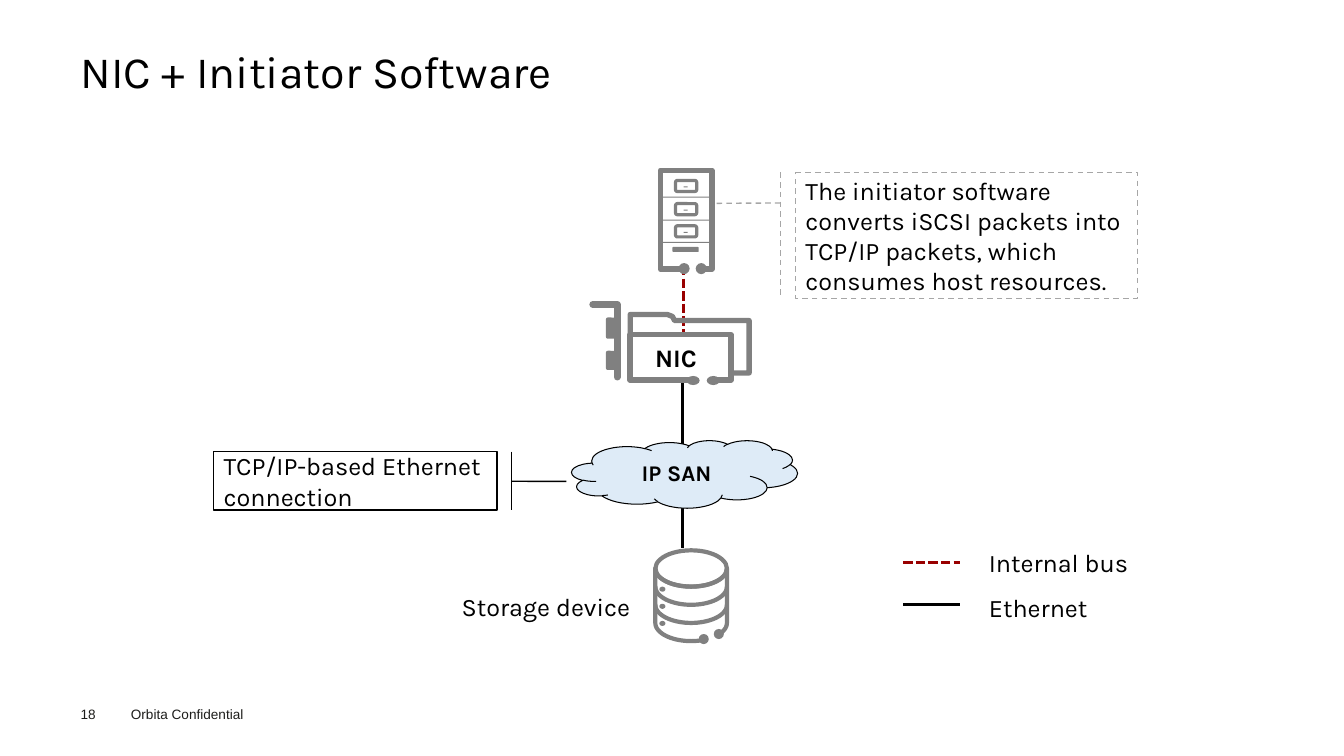
from dataclasses import dataclass
from math import cos, pi, sin

from lxml.etree import SubElement
from pptx import Presentation
from pptx.dml.color import RGBColor
from pptx.enum.dml import MSO_LINE
from pptx.enum.shapes import MSO_CONNECTOR, MSO_SHAPE
from pptx.enum.text import MSO_ANCHOR, MSO_AUTO_SIZE, PP_ALIGN
from pptx.oxml.ns import qn
from pptx.util import Inches, Pt


@dataclass(frozen=True)
class Theme:
    black: str = "000000"
    footer: str = "1D1D1B"
    bus: str = "990000"
    icon: str = "808080"
    callout: str = "A6A6A6"
    cloud: str = "DEEBF7"
    font: str = "Karla"
    footer_font: str = "Arial"
    title_size: float = 32
    text_size: float = 18
    cloud_size: float = 16
    footer_size: float = 9.7


theme = Theme()
BODY = {"name": theme.font, "size": Pt(theme.text_size)}
BOLD = {**BODY, "bold": True}
TITLE = {**BODY, "size": Pt(theme.title_size)}
CLOUD = {**BOLD, "size": Pt(theme.cloud_size)}
FOOTER = {"name": theme.footer_font, "size": Pt(theme.footer_size)}


def write_text(shape, text, font_format, color=theme.black, spacing=1.0,
               align=PP_ALIGN.LEFT, **frame_format):
    frame = shape.text_frame
    for name, value in {"word_wrap": True, **frame_format}.items():
        setattr(frame, name, value)
    paragraph = frame.paragraphs[0]
    paragraph.text = text
    paragraph.alignment = align
    paragraph.line_spacing = spacing
    for name, value in font_format.items():
        setattr(paragraph.font, name, value)
    paragraph.font.color.rgb = RGBColor.from_string(color)


def style_shape(shape, fill=None, line=None, width=1, dash=None):
    shape.shadow.inherit = False
    if fill:
        shape.fill.solid()
        shape.fill.fore_color.rgb = RGBColor.from_string(fill)
    else:
        shape.fill.background()
    if line:
        shape.line.color.rgb = RGBColor.from_string(line)
        shape.line.width = Pt(width)
        shape.line.dash_style = dash
    else:
        shape.line.fill.background()


presentation = Presentation()
presentation.slide_width = Inches(13.33)
presentation.slide_height = Inches(7.5)
slide = presentation.slides.add_slide(presentation.slide_layouts[5])
shapes = slide.shapes
no_margins = dict.fromkeys(
    ("margin_left", "margin_top", "margin_right", "margin_bottom"), 0)

# Title and footer
title = shapes.title
title.left, title.top, title.width, title.height = map(Inches, (0.8, 0.49, 11.73, 0.54))
write_text(title, "NIC + Initiator Software", TITLE, spacing=0.9,
           vertical_anchor=MSO_ANCHOR.TOP, auto_size=MSO_AUTO_SIZE.NONE, **no_margins)

footer = shapes.add_textbox(*map(Inches, (1.2, 6.95, 1.6, 0.27)))
write_text(footer, "Orbita Confidential", FOOTER, theme.footer)
page_number = shapes.add_textbox(*map(Inches, (0.8, 7, 0.55, 0.16)))
write_text(page_number, "18", FOOTER, theme.footer, **no_margins)

# Legend and device labels
for text, left, top, width in (
    ("Internal bus", 9.71, 5.26, 1.78),
    ("Ethernet", 9.71, 5.71, 1.19),
    ("Storage device", 4.48, 5.7, 2.06),
):
    label = shapes.add_textbox(*map(Inches, (left, top, width, 0.49)))
    write_text(label, text, BODY, spacing=1.4)

# Callouts
for text, box, adjustments, color, dash, flipped in (
    ("The initiator software converts iSCSI packets into TCP/IP packets, "
     "which consumes host resources.",
     (7.89, 1.71, 3.39, 1.25), (0.243, -0.044, 0.246, -0.239),
     theme.callout, MSO_LINE.DASH, False),
    ("TCP/IP-based Ethernet connection",
     (2.12, 4.48, 2.81, 0.58), (0.508, -0.052, 0.511, -0.245),
     theme.black, MSO_LINE.SOLID, True),
):
    callout = shapes.add_shape(
        MSO_SHAPE.LINE_CALLOUT_1_BORDER_AND_ACCENT_BAR, *map(Inches, box))
    for index, adjustment in enumerate(adjustments):
        callout.adjustments[index] = adjustment
    style_shape(callout, line=color, dash=dash)
    if flipped:
        callout.element.spPr.find(qn("a:xfrm")).set("flipH", "1")
    write_text(callout, text, BODY, vertical_anchor=MSO_ANCHOR.MIDDLE)

# Internal bus and Ethernet links, with their legend samples
for ends, color, dash in (
    ((8.96, 5.58, 9.52, 5.58), theme.bus, MSO_LINE.SQUARE_DOT),
    ((8.96, 6, 9.52, 6), theme.black, MSO_LINE.SOLID),
    ((6.78, 2.64, 6.78, 3.29), theme.bus, MSO_LINE.SQUARE_DOT),
    ((6.77, 3.8, 6.77, 5.44), theme.black, MSO_LINE.SOLID),
):
    link = shapes.add_connector(MSO_CONNECTOR.STRAIGHT, *map(Inches, ends))
    link.line.color.rgb = RGBColor.from_string(color)
    link.line.width = Pt(2.25)
    link.line.dash_style = dash
    SubElement(link.element.spPr, qn("a:effectLst"))

cloud = shapes.add_shape(MSO_SHAPE.CLOUD, *map(Inches, (5.67, 4.37, 2.24, 0.67)))
style_shape(cloud, theme.cloud, theme.black, 0.75)
write_text(cloud, "IP SAN", CLOUD, align=PP_ALIGN.CENTER, vertical_anchor=MSO_ANCHOR.MIDDLE)

# Storage cylinder: every tier is the front half of the same ellipse
center_x, radius_x, radius_y = 6.855, 0.355, 0.18
tier_tops = [5.64 + 0.18 * tier for tier in range(4)]
steps = 36
front_arc = [(center_x - radius_x * cos(pi * step / steps),
              radius_y * sin(pi * step / steps)) for step in range(steps + 1)]
tiers = [[(x, top + y) for x, y in front_arc] for top in tier_tops]
left_edge, right_edge = tiers[0][0], tiers[0][-1]
base_left = [left_edge] + [point for point in tiers[3] if point[0] < 6.98]
base_right = [point for point in tiers[3] if point[0] > 7.13] + [right_edge]

# Icon strokes: line width, then the points of the stroke
server_frame = [(6.76, 2.67), (6.55, 2.67), (6.55, 1.69), (7.06, 1.69), (7.06, 2.67), (6.94, 2.67)]
card_front = [(7.08, 3.77), (7.25, 3.77), (7.25, 3.32), (6.25, 3.32), (6.25, 3.77), (6.88, 3.77)]
card_back = [(6.25, 3.32), (6.25, 3.12), (6.62, 3.12), (6.67, 3.14), (6.69, 3.18),
             (7.43, 3.18), (7.43, 3.7), (7.25, 3.7)]
card_bracket = [(5.88, 3.02), (6.12, 3.02), (6.12, 3.74)]
for width, points in (
    (4, server_frame), (3.8, card_front), (3.8, card_back), (5, card_bracket),
    *((3, tier) for tier in tiers[:3]), (3, base_left), (3, base_right),
):
    start, *others = [(Inches(x), Inches(y)) for x, y in points]
    builder = shapes.build_freeform(*start)
    builder.add_line_segments(others, close=False)
    stroke = builder.convert_to_shape()
    style_shape(stroke, line=theme.icon, width=width)
    outline = stroke.element.spPr.find(qn("a:ln"))
    outline.set("cap", "rnd")
    SubElement(outline, qn("a:round"))

cylinder_top = shapes.add_shape(MSO_SHAPE.OVAL, *map(Inches, (
    center_x - radius_x, tier_tops[0] - radius_y, 2 * radius_x, 2 * radius_y)))
style_shape(cylinder_top, line=theme.icon, width=3)

# Server drawers
solid_parts = [(MSO_SHAPE.ROUNDED_RECTANGLE, (6.67, 2.45, 0.26, 0.05))]
for top in (1.77, 2, 2.22):
    drawer = shapes.add_shape(
        MSO_SHAPE.ROUNDED_RECTANGLE, *map(Inches, (6.7, top + 0.02, 0.21, 0.11)))
    style_shape(drawer, line=theme.icon, width=2.3)
    solid_parts += [
        (MSO_SHAPE.RECTANGLE, (6.55, top + 0.18, 0.51, 0.01)),
        (MSO_SHAPE.RECTANGLE, (6.78, top + 0.08, 0.04, 0.01)),
    ]

# Bracket tabs, stroke ends and indicator lights
solid_parts += [(MSO_SHAPE.ROUNDED_RECTANGLE, (6.01, top, 0.11, height))
                for top, height in ((3.15, 0.21), (3.48, 0.19))]
for left, top, width, height in (
    (6.73, 2.61, 0.11, 0.11), (6.9, 2.61, 0.11, 0.11),
    (6.81, 3.73, 0.13, 0.09), (7.01, 3.73, 0.13, 0.09),
    (6.93, 6.29, 0.1, 0.1), (7.08, 6.24, 0.1, 0.1),
    *((6.54, top, 0.06, 0.05) for top in (5.82, 5.99, 6.16)),
):
    solid_parts.append((MSO_SHAPE.OVAL, (left, top, width, height)))
for kind, box in solid_parts:
    part = shapes.add_shape(kind, *map(Inches, box))
    style_shape(part, theme.icon)

card_label = shapes.add_textbox(*map(Inches, (6.4, 3.35, 0.7, 0.4)))
write_text(card_label, "NIC", BOLD)

presentation.save("out.pptx")
